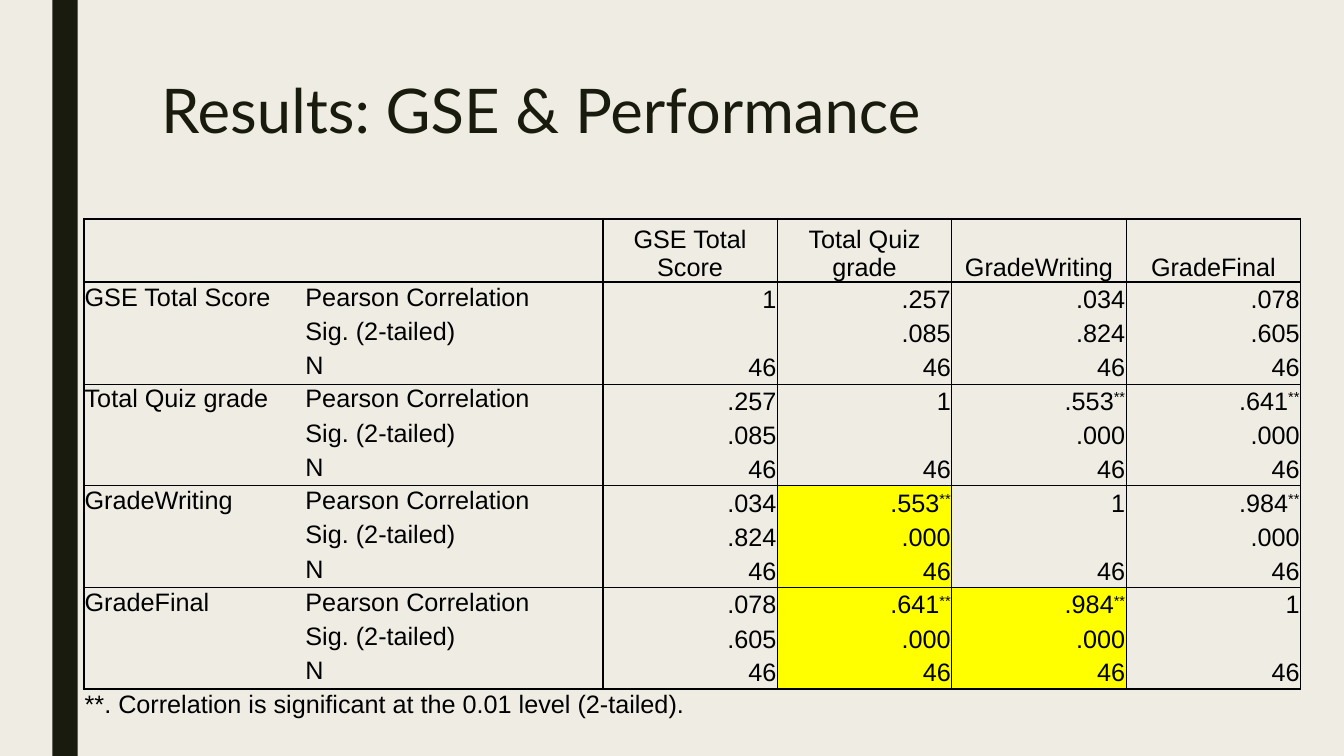
from lxml.etree import SubElement
from pptx import Presentation
from pptx.dml.color import RGBColor
from pptx.enum.shapes import MSO_SHAPE
from pptx.enum.text import MSO_ANCHOR as Anchor, PP_ALIGN as Align
from pptx.oxml.ns import qn
from pptx.util import Pt

PX = 9144  # EMU; 100 px to the inch
INK, PAPER, BLACK, YELLOW = "191B0E", "EFEDE3", "000000", "FFFF00"
THICK, THIN, NONE = 1.5, 0.5, 0

VARIABLES = ["GSE Total Score", "Total Quiz grade", "GradeWriting", "GradeFinal"]
STATISTICS = ["Pearson Correlation", "Sig. (2-tailed)", "N"]
SAMPLE = "46"
# (row, column) below the diagonal: correlation, significance
PAIRS = {
    (1, 0): (".257", ".085"),
    (2, 0): (".034", ".824"),
    (2, 1): (".553", ".000"),
    (3, 0): (".078", ".605"),
    (3, 1): (".641", ".000"),
    (3, 2): (".984", ".000"),
}
FOOTNOTE = "**. Correlation is significant at the 0.01 level (2-tailed)."

COLUMN_WIDTHS = [219, 296] + [173] * len(VARIABLES)
ROW_HEIGHTS = [63] + [34, 34, 33] * len(VARIABLES) + [36]
COLUMN_EDGES = [THICK, NONE, THICK, THIN, THIN, THIN, THICK]
ROW_EDGES = [THICK, THICK] + [NONE, NONE, THIN] * 3 + [NONE, NONE, THICK, NONE]


def color(value):
    return RGBColor.from_string(value)


def add_run(paragraph, text, size, font, ink, superscript=False):
    run = paragraph.add_run()
    run.text = text
    run.font.size = Pt(size)
    run.font.name = font
    run.font.color.rgb = color(ink)
    if superscript:
        run.font._element.set("baseline", "30000")


def add_band(slide, left, top, width, height):
    shape = slide.shapes.add_shape(
        MSO_SHAPE.RECTANGLE, left * PX, top * PX, width * PX, height * PX)
    shape.shadow.inherit = False
    shape.fill.solid()
    shape.fill.fore_color.rgb = color(INK)
    shape.line.fill.background()


def add_title(slide, text, left, top, width, height):
    frame = slide.shapes.add_textbox(
        left * PX, top * PX, width * PX, height * PX).text_frame
    frame.word_wrap = True
    paragraph = frame.paragraphs[0]
    paragraph.line_spacing = 0.89
    add_run(paragraph, text, 44, "Lato", INK)


def set_borders(cell, left, right, top, bottom):
    """Set the edge widths in points; zero hides an edge."""
    properties = cell._tc.get_or_add_tcPr()
    for side, width in zip("LRTB", (left, right, top, bottom)):
        line = SubElement(properties, qn(f"a:ln{side}"), w=str(Pt(width)))
        if width:
            fill = SubElement(line, qn("a:solidFill"))
            SubElement(fill, qn("a:srgbClr"), val=BLACK)
        else:
            SubElement(line, qn("a:noFill"))


def write_cell(cell, text, align=Align.LEFT, anchor=Anchor.TOP, starred=False):
    cell.vertical_anchor = anchor
    paragraph = cell.text_frame.paragraphs[0]
    paragraph.alignment = align
    if text:
        add_run(paragraph, text, 18, "Arial", BLACK)
    if starred:
        add_run(paragraph, "**", 18, "Arial", BLACK, superscript=True)


def format_cells(table):
    last = len(ROW_HEIGHTS) - 1
    for row in range(len(ROW_HEIGHTS)):
        for column in range(len(COLUMN_WIDTHS)):
            cell = table.cell(row, column)
            cell.margin_left = cell.margin_right = cell.margin_top = PX
            cell.margin_bottom = 0
            sides = (NONE, NONE) if row == last else COLUMN_EDGES[column:column + 2]
            set_borders(cell, *sides, *ROW_EDGES[row:row + 2])
            cell.fill.background()


def write_group(table, index, variable):
    """Fill the three rows of one variable."""
    first = 1 + index * len(STATISTICS)
    table.cell(first, 0).merge(table.cell(first + 2, 0))
    write_cell(table.cell(first, 0), variable)
    for offset, statistic in enumerate(STATISTICS):
        write_cell(table.cell(first + offset, 1), statistic)
    for other in range(len(VARIABLES)):
        pair = (max(index, other), min(index, other))
        correlation, significance = PAIRS.get(pair, ("1", ""))
        significant = significance == ".000"
        for offset, value in enumerate((correlation, significance, SAMPLE)):
            cell = table.cell(first + offset, 2 + other)
            write_cell(cell, value, Align.RIGHT, Anchor.MIDDLE,
                       starred=significant and offset == 0)
            if significant and other < index:
                cell.fill.solid()
                cell.fill.fore_color.rgb = color(YELLOW)


def add_correlations(slide, left, top):
    table = slide.shapes.add_table(
        len(ROW_HEIGHTS), len(COLUMN_WIDTHS), left * PX, top * PX,
        sum(COLUMN_WIDTHS) * PX, sum(ROW_HEIGHTS) * PX).table
    table.first_row = table.horz_banding = False
    for column, width in zip(table.columns, COLUMN_WIDTHS):
        column.width = width * PX
    for row, height in zip(table.rows, ROW_HEIGHTS):
        row.height = height * PX
    format_cells(table)

    table.cell(0, 0).merge(table.cell(0, 1))
    for index, variable in enumerate(VARIABLES):
        write_cell(table.cell(0, 2 + index), variable, Align.CENTER, Anchor.BOTTOM)
        write_group(table, index, variable)
    last = len(ROW_HEIGHTS) - 1
    table.cell(last, 0).merge(table.cell(last, len(COLUMN_WIDTHS) - 1))
    write_cell(table.cell(last, 0), FOOTNOTE)


def main():
    presentation = Presentation()
    presentation.slide_width = 1333 * PX
    presentation.slide_height = 750 * PX
    slide = presentation.slides.add_slide(presentation.slide_layouts[6])
    slide.background.fill.solid()
    slide.background.fill.fore_color.rgb = color(PAPER)
    add_band(slide, 52, 0, 25, 750)
    add_title(slide, "Results: GSE & Performance", 150, 75, 1050, 162)
    add_correlations(slide, 83, 217)
    presentation.save("out.pptx")


if __name__ == "__main__":
    main()
